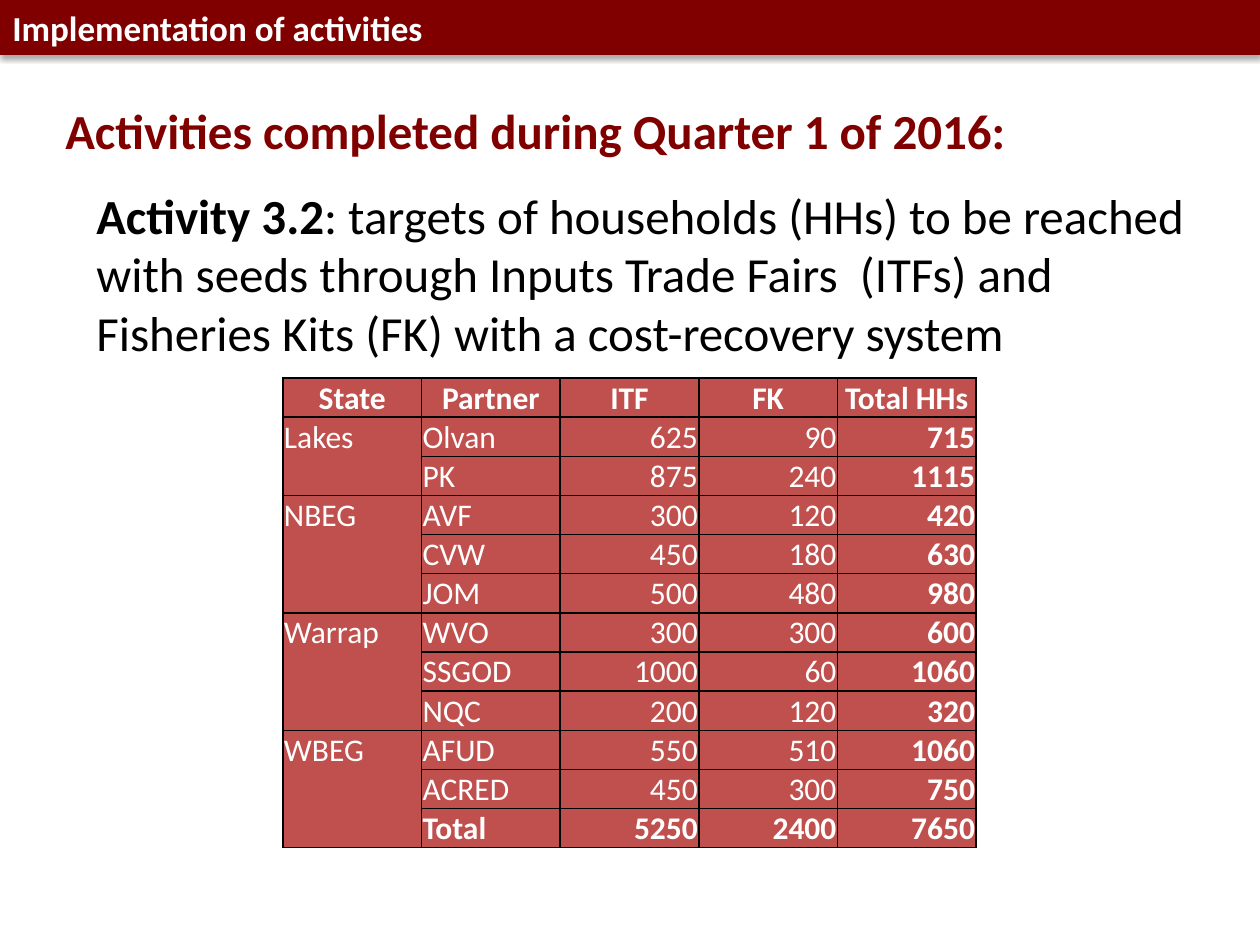
from lxml import etree
from pptx import Presentation
from pptx import util as u
from pptx.dml.color import RGBColor
from pptx.enum import shapes, text
from pptx.oxml import parse_xml
from pptx.oxml.ns import nsdecls, qn

SCALE = 914400 / 126
MAROON = RGBColor(0x80, 0x00, 0x00)
BRICK = RGBColor(0xC0, 0x50, 0x4D)
WHITE = RGBColor(0xFF, 0xFF, 0xFF)
BLACK = RGBColor(0x00, 0x00, 0x00)

HEADS = ["State", "Partner", "ITF", "FK", "Total HHs"]
STATES = {
    "Lakes": [("Olvan", 625, 90, 715), ("PK", 875, 240, 1115)],
    "NBEG": [("AVF", 300, 120, 420), ("CVW", 450, 180, 630),
             ("JOM", 500, 480, 980)],
    "Warrap": [("WVO", 300, 300, 600), ("SSGOD", 1000, 60, 1060),
               ("NQC", 200, 120, 320)],
    "WBEG": [("AFUD", 550, 510, 1060), ("ACRED", 450, 300, 750),
             ("Total", 5250, 2400, 7650)],
}


def px(n):
    return u.Emu(round(n * SCALE))


def style(run, size, color, bold):
    font = run.font
    font.name, font.size, font.bold = "Calibri", u.Pt(size), bold
    font.color.rgb = color


def add_text(slide, box, parts, size, color):
    """Add a wrapped text box from (wording, bold) parts."""
    frame = slide.shapes.add_textbox(*map(px, box)).text_frame
    frame.word_wrap = True
    for words, bold in parts:
        run = frame.paragraphs[0].add_run()
        run.text = words
        style(run, size, color, bold)


def add_bar(slide, box, words):
    bar = slide.shapes.add_shape(shapes.MSO_SHAPE.RECTANGLE, *map(px, box))
    bar.fill.solid()
    bar.fill.fore_color.rgb = MAROON
    bar.line.fill.background()
    bar.shadow.inherit = False
    effects = bar._element.spPr.find(qn("a:effectLst"))
    effects.append(parse_xml(
        f'<a:outerShdw {nsdecls("a")} blurRad="39400" dist="22900" '
        'dir="5400000" rotWithShape="0"><a:srgbClr val="000000">'
        '<a:alpha val="35000"/></a:srgbClr></a:outerShdw>'))
    bar.text_frame.text = words
    para = bar.text_frame.paragraphs[0]
    para.alignment = text.PP_ALIGN.LEFT
    style(para.runs[0], 20, WHITE, True)


def set_edges(cell):
    props = cell._tc.get_or_add_tcPr()
    for side in ("lnL", "lnR", "lnT", "lnB"):
        line = etree.SubElement(props, qn(f"a:{side}"), w="12700")
        fill = etree.SubElement(line, qn("a:solidFill"))
        etree.SubElement(fill, qn("a:srgbClr"), val=str(BLACK))


def fill_cell(cell, words, align, bold):
    cell.text = words
    para = cell.text_frame.paragraphs[0]
    para.alignment = align
    for run in para.runs:
        style(run, 18, WHITE, bold)


def add_targets(slide, box):
    """Add the household table, with one merged cell for each state."""
    count = 1 + sum(map(len, STATES.values()))
    grid = slide.shapes.add_table(count, len(HEADS), *map(px, box)).table
    for col in grid.columns:
        col.width = px(box[2] / len(HEADS))
    for row in grid.rows:
        row.height = px(box[3] / count)
    for cell in grid.iter_cells():
        cell.margin_left = cell.margin_right = cell.margin_top = px(1)
        cell.margin_bottom = 0
        set_edges(cell)
        cell.fill.solid()
        cell.fill.fore_color.rgb = BRICK

    align = text.PP_ALIGN
    for c, head in enumerate(HEADS):
        fill_cell(grid.cell(0, c), head, align.CENTER, True)
    top = 1
    for state, rows in STATES.items():
        first = grid.cell(top, 0)
        first.merge(grid.cell(top + len(rows) - 1, 0))
        fill_cell(first, state, align.LEFT, False)
        for r, row in enumerate(rows, top):
            for c, value in enumerate(row, 1):
                bold = c == len(row) or row[0] == "Total"
                side = align.LEFT if c == 1 else align.RIGHT
                fill_cell(grid.cell(r, c), str(value), side, bold)
        top += len(rows)


def main():
    deck = Presentation()
    deck.slide_width, deck.slide_height = px(1260), px(945)
    slide = deck.slides.add_slide(deck.slide_layouts[6])
    add_text(slide, (53, 94, 987, 72),
             [("Activities completed during Quarter 1 of 2016:", True)],
             28, MAROON)
    add_bar(slide, (0, 0, 1260, 55), "Implementation of activities")
    add_targets(slide, (283, 378, 693, 470))
    add_text(slide, (84, 179, 1144, 190),
             [("Activity 3.2", True),
              (": targets of households (HHs) to be reached with seeds "
               "through Inputs Trade Fairs  (ITFs) and Fisheries Kits (FK) "
               "with a cost-recovery system", False)],
             28, BLACK)
    deck.save("out.pptx")


if __name__ == "__main__":
    main()
